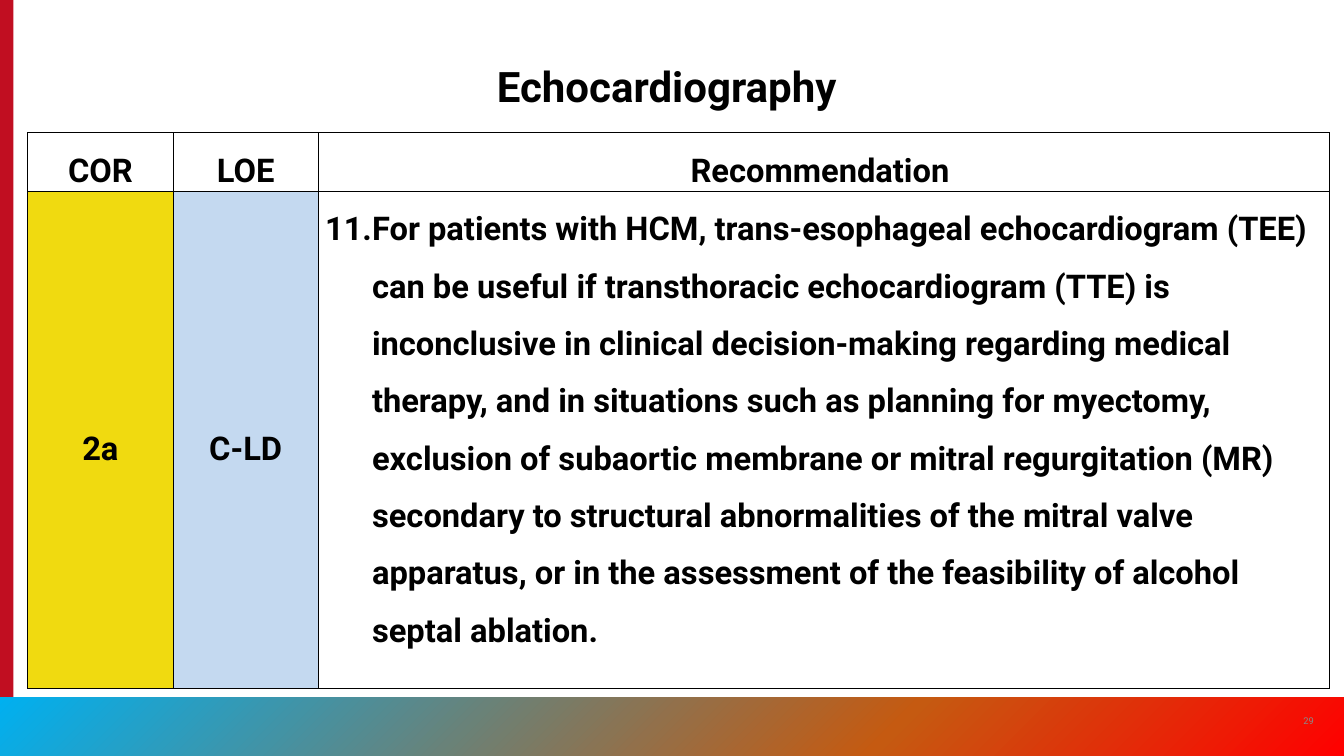
from copy import deepcopy
from dataclasses import dataclass
from typing import Optional

from lxml.etree import SubElement
from pptx import Presentation
from pptx.dml.color import RGBColor
from pptx.enum.shapes import MSO_SHAPE
from pptx.enum.text import MSO_ANCHOR, MSO_AUTO_SIZE, PP_ALIGN
from pptx.oxml.ns import qn
from pptx.util import Inches, Pt


@dataclass(frozen=True)
class Theme:
    font: str = "Roboto"
    ink: str = "000000"
    muted: str = "8A8B8A"
    red_bar: str = "C10E21"
    cor: str = "F0DA10"
    loe: str = "C4D9F0"
    footer_stops: tuple = ((0, "00B0F0"), (0.66, "C55A11"), (1, "FF0000"))
    title_size: int = 36
    table_size: int = 28
    number_size: int = 8
    border_width: int = 1


@dataclass(frozen=True)
class Entry:
    text: str
    fill: Optional[str] = None
    start_number: Optional[int] = None


THEME = Theme()
COLUMN_WIDTHS = (1.73, 1.73, 12.04)
ROW_HEIGHTS = (0.66, 5.92)
ROWS = (
    (Entry("COR"), Entry("LOE"), Entry("Recommendation ")),
    (
        Entry("2a", THEME.cor),
        Entry("C-LD", THEME.loe),
        Entry(
            "For patients with HCM, trans-esophageal echocardiogram (TEE) can be useful "
            "if transthoracic echocardiogram (TTE) is inconclusive in clinical "
            "decision-making regarding medical therapy, and in situations such as planning "
            "for myectomy, exclusion of subaortic membrane or mitral regurgitation (MR) "
            "secondary to structural abnormalities of the mitral valve apparatus, or in the "
            "assessment of the feasibility of alcohol septal ablation.",
            start_number=11,
        ),
    ),
)


def add_text(paragraph, text: str, size: int, color: str, bold: bool = False) -> None:
    run = paragraph.add_run()
    run.text = text
    run.font.name = THEME.font
    run.font.size = Pt(size)
    run.font.bold = bold
    run.font.color.rgb = RGBColor.from_string(color)


def add_bar(slide, left: float, top: float, width: float, height: float):
    bar = slide.shapes.add_shape(
        MSO_SHAPE.RECTANGLE, Inches(left), Inches(top), Inches(width), Inches(height)
    )
    bar.shadow.inherit = False
    bar.line.fill.background()
    return bar


def fill_gradient(bar, stops: tuple) -> None:
    bar.fill.gradient()
    bar.fill.gradient_angle = 315
    stop_list = next(bar._element.iter(qn("a:gsLst")))
    stop_list.append(deepcopy(stop_list[-1]))
    for stop, (position, color) in zip(bar.fill.gradient_stops, stops):
        stop.position = position
        stop.color.rgb = RGBColor.from_string(color)


def add_borders(cell) -> None:
    properties = cell._tc.get_or_add_tcPr()
    for side in ("lnL", "lnR", "lnT", "lnB"):
        line = SubElement(properties, qn(f"a:{side}"), w=str(Pt(THEME.border_width)))
        SubElement(SubElement(line, qn("a:solidFill")), qn("a:srgbClr"), val=THEME.ink)


def number_paragraph(paragraph, start: int) -> None:
    properties = paragraph._p.get_or_add_pPr()
    properties.set("marL", str(Inches(0.56)))
    properties.set("indent", str(-Inches(0.56)))
    SubElement(properties, qn("a:buFont"), typeface=THEME.font)
    SubElement(properties, qn("a:buAutoNum"), type="arabicPeriod", startAt=str(start))


def fill_cell(cell, entry: Entry) -> None:
    add_borders(cell)
    if entry.fill:
        cell.fill.solid()
        cell.fill.fore_color.rgb = RGBColor.from_string(entry.fill)
    else:
        cell.fill.background()
    cell.margin_left = cell.margin_right = Inches(0.07)
    cell.margin_top = cell.margin_bottom = 0
    paragraph = cell.text_frame.paragraphs[0]
    if entry.start_number:
        cell.margin_left = Inches(0.08)
        cell.vertical_anchor = MSO_ANCHOR.TOP
        number_paragraph(paragraph, entry.start_number)
    else:
        cell.vertical_anchor = MSO_ANCHOR.MIDDLE
        paragraph.alignment = PP_ALIGN.CENTER
    paragraph.line_spacing = 1.5
    add_text(paragraph, entry.text, THEME.table_size, THEME.ink, bold=True)


def add_title(slide, text: str) -> None:
    title = slide.shapes.title
    title.left, title.top = Inches(1.75), Inches(0.67)
    title.width, title.height = Inches(12.5), Inches(1.01)
    frame = title.text_frame
    frame.auto_size = MSO_AUTO_SIZE.NONE
    frame.vertical_anchor = MSO_ANCHOR.TOP
    frame.paragraphs[0].alignment = PP_ALIGN.CENTER
    add_text(frame.paragraphs[0], text, THEME.title_size, THEME.ink, bold=True)


def add_page_number(slide, number: str) -> None:
    box = slide.shapes.add_textbox(Inches(15.34), Inches(8.34), Inches(0.48), Inches(0.48))
    frame = box.text_frame
    frame.word_wrap = True
    frame.vertical_anchor = MSO_ANCHOR.MIDDLE
    frame.paragraphs[0].alignment = PP_ALIGN.CENTER
    add_text(frame.paragraphs[0], number, THEME.number_size, THEME.muted)


def add_recommendations(slide) -> None:
    table = slide.shapes.add_table(
        len(ROWS), len(COLUMN_WIDTHS), Inches(0.33), Inches(1.58),
        Inches(sum(COLUMN_WIDTHS)), Inches(sum(ROW_HEIGHTS)),
    ).table
    table.first_row = table.horz_banding = False
    for column, width in zip(table.columns, COLUMN_WIDTHS):
        column.width = Inches(width)
    for row, height, entries in zip(table.rows, ROW_HEIGHTS, ROWS):
        row.height = Inches(height)
        for cell, entry in zip(row.cells, entries):
            fill_cell(cell, entry)


def main() -> None:
    deck = Presentation()
    deck.slide_width, deck.slide_height = Inches(16), Inches(9)
    slide = deck.slides.add_slide(deck.slide_layouts[5])
    red_bar = add_bar(slide, 0, 0, 0.16, 9)
    red_bar.fill.solid()
    red_bar.fill.fore_color.rgb = RGBColor.from_string(THEME.red_bar)
    footer = add_bar(slide, 0, 8.3, 16, 0.7)
    fill_gradient(footer, THEME.footer_stops)
    add_page_number(slide, "29")
    add_title(slide, "Echocardiography ")
    add_recommendations(slide)
    deck.save("out.pptx")


if __name__ == "__main__":
    main()
